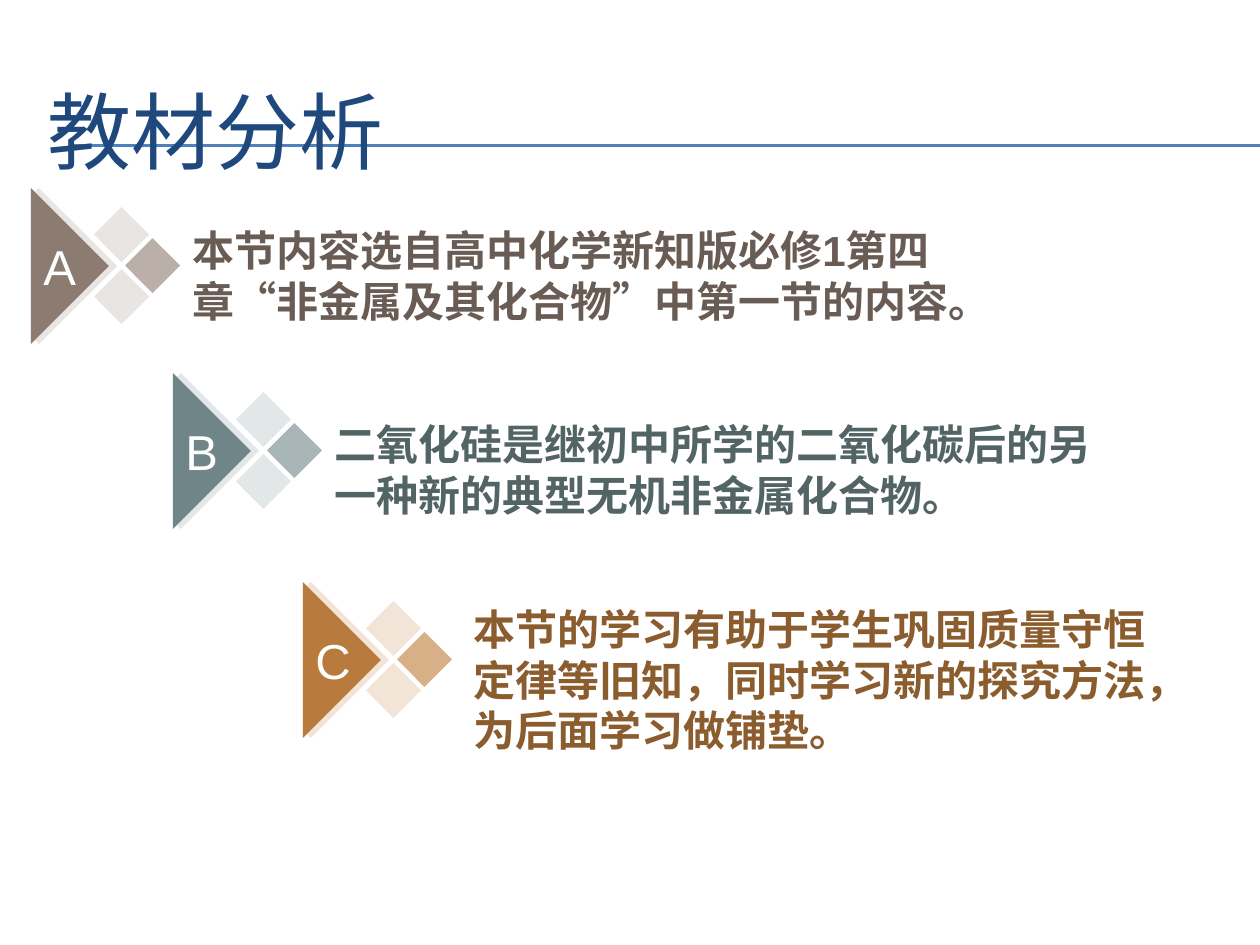
from lxml import etree
from pptx import Presentation
from pptx.dml.color import RGBColor
from pptx.enum.shapes import MSO_CONNECTOR, MSO_SHAPE
from pptx.enum.text import MSO_ANCHOR, PP_ALIGN
from pptx.oxml.ns import qn
from pptx.util import Pt

PX = 914400 / 126
STRAIGHT, DIAMOND = MSO_CONNECTOR.STRAIGHT, MSO_SHAPE.DIAMOND
MIDDLE, BOTTOM = MSO_ANCHOR.MIDDLE, MSO_ANCHOR.BOTTOM
LEFT, CENTER = PP_ALIGN.LEFT, PP_ALIGN.CENTER

COLORS = {
    "title": "1F497D", "rule": "4F81BD", "white": "FFFFFF",
    "A": "8C7B70", "A pale": "E8E5E2", "A mid": "BAB0A9", "A text": "695C54",
    "B": "6F8587", "B pale": "E2E7E7", "B mid": "A8B6B8", "B text": "536465",
    "C": "B97B3D", "C pale": "F2E5D7", "C mid": "D8B088", "C text": "8B5C2E",
}

POINTS = [
    ("A", (31, 188), (180, 147, 886, 185),
     "本节内容选自高中化学新知版必修1第四章“非金属及其化合物”中第一节的内容。"),
    ("B", (173, 373), (322, 334, 790, 192),
     "二氧化硅是继初中所学的二氧化碳后的另一种新的典型无机非金属化合物。"),
    ("C", (303, 582), (461, 592, 718, 169),
     "本节的学习有助于学生巩固质量守恒定律等旧知，同时学习新的探究方法，为后面学习做铺垫。"),
]
DIAMOND_SIZE = 55
DIAMONDS = [(63, 19, "pale"), (63, 81, "pale"), (94, 50, "mid")]
BAND = [(8, 0), (86, 78), (8, 156), (4, 152), (78, 78), (4, 4)]
ARROW = [(0, 0), (78, 78), (0, 156)]


def emu(*lengths):
    """Turn px lengths into EMU."""
    return [round(length * PX) for length in lengths]


def color(name):
    """Look up a named colour."""
    return RGBColor.from_string(COLORS[name])


def write(shape, text, size, font, color_name, anchor, align=LEFT, bold=False):
    """Put one formatted paragraph into a shape."""
    frame = shape.text_frame
    frame.word_wrap = True
    frame.vertical_anchor = anchor
    frame.text = text
    para = frame.paragraphs[0]
    para.alignment = align
    span = para.runs[0]
    span.font.size, span.font.name, span.font.bold = Pt(size), font, bold
    span.font.color.rgb = color(color_name)


def paint(shape, color_name):
    """Give a shape a flat fill with no line or shadow."""
    shape.shadow.inherit = False
    shape.fill.solid()
    shape.fill.fore_color.rgb = color(color_name)
    shape.line.fill.background()


def add_outline(shapes, origin, points, color_name):
    """Draw a filled polygon from points relative to an origin."""
    left, top = origin
    corners = [(left + x, top + y) for x, y in points]
    builder = shapes.build_freeform(*corners[0], scale=PX)
    builder.add_line_segments(corners[1:], close=True)
    outline = builder.convert_to_shape()
    paint(outline, color_name)
    return outline


def add_header(page, box, text):
    """Place the title over its double rule."""
    left, top, width, height = box
    for y in (top + 73, top + 74):
        rule = page.shapes.add_connector(STRAIGHT, *emu(left + 36, y, 1260, y))
        rule.line.color.rgb = color("rule")
        rule.line.width = Pt(0.75)
        etree.SubElement(rule._element.spPr, qn("a:effectLst"))
    title = page.shapes.add_textbox(*emu(left, top, width, height))
    write(title, text, 48, "Lato", "title", MIDDLE)


def add_marker(page, origin, letter):
    """Place the lettered arrow with its three diamonds."""
    left, top = origin
    shapes = page.shapes.add_group_shape().shapes
    for x, y, tone in DIAMONDS:
        diamond = shapes.add_shape(
            DIAMOND, *emu(left + x, top + y, DIAMOND_SIZE, DIAMOND_SIZE))
        paint(diamond, f"{letter} {tone}")
    add_outline(shapes, origin, BAND, f"{letter} pale")
    arrow = add_outline(shapes, origin, ARROW, letter)
    arrow.text_frame.margin_right = emu(35)[0]
    write(arrow, letter, 28, "Arial", "white", MIDDLE, CENTER)


def add_point(page, origin, box, letter, text):
    """Place one marker and its statement."""
    add_marker(page, origin, letter)
    statement = page.shapes.add_textbox(*emu(*box))
    write(statement, text, 24, "Arial", f"{letter} text", BOTTOM, bold=True)


def main():
    """Build the deck."""
    deck = Presentation()
    deck.slide_width, deck.slide_height = emu(1260, 945)
    page = deck.slides.add_slide(deck.slide_layouts[6])
    add_header(page, (35, 72, 1197, 116), "教材分析")
    for letter, origin, box, text in POINTS:
        add_point(page, origin, box, letter, text)
    deck.save("out.pptx")


if __name__ == "__main__":
    main()
